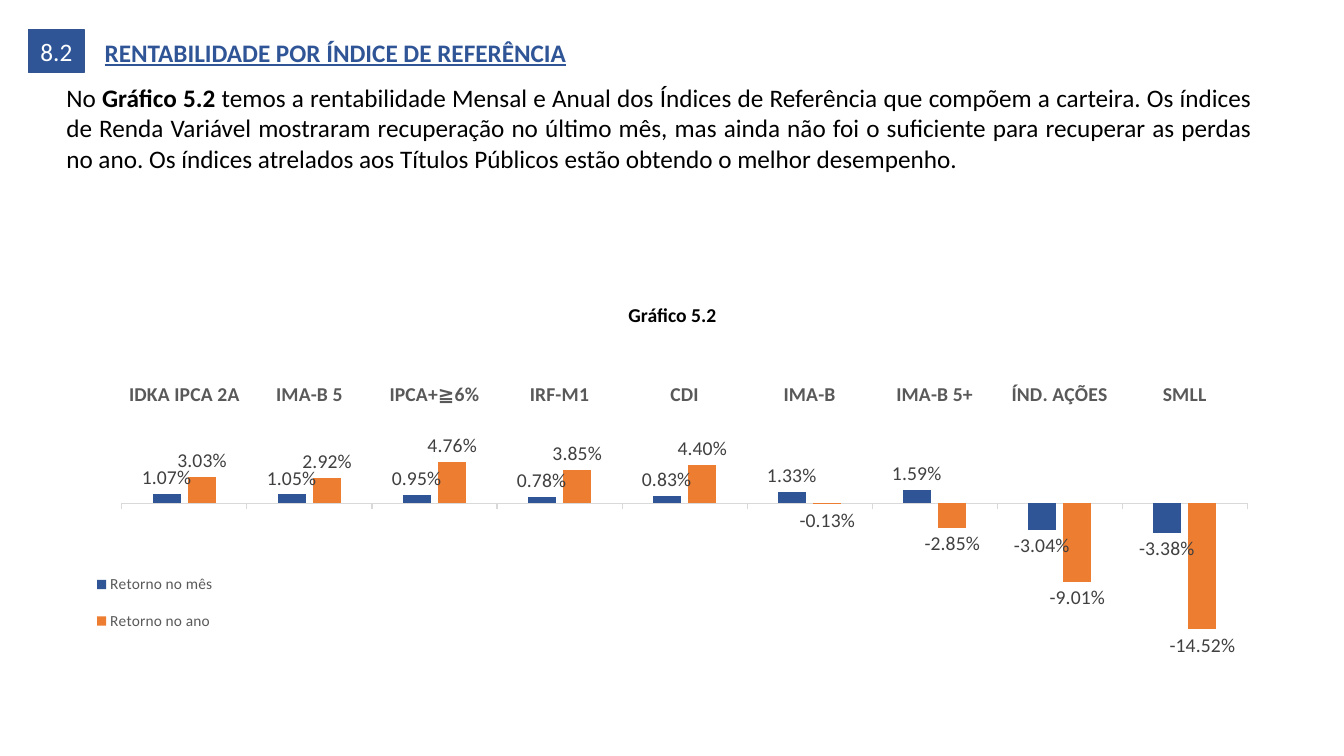
from dataclasses import dataclass

import lxml.etree
import pptx
import pptx.chart.data
import pptx.dml.color
import pptx.enum.chart
import pptx.enum.shapes
import pptx.enum.text
import pptx.oxml
import pptx.oxml.ns
import pptx.util

Pt = pptx.util.Pt
Align = pptx.enum.text.PP_ALIGN
FONT = "Calibri"
BLUE = "2F5597"
ORANGE = "ED7D31"
BLACK = "000000"
WHITE = "FFFFFF"
GREY = "595959"
PERCENT = "0.00%"


@dataclass
class Run:
    text: str
    size: float = 18
    color: str = BLACK
    bold: bool = False
    underline: bool = False


@dataclass
class TextBox:
    left: float
    top: float
    width: float
    height: float
    align: Align
    runs: list[Run]


@dataclass
class Series:
    name: str
    color: str
    values: list[float]


TEXTS = [
    TextBox(67.7, 23, 404.6, 28.8, Align.LEFT,
            [Run("RENTABILIDADE POR ÍNDICE DE REFERÊNCIA", 18, BLUE, True, True)]),
    TextBox(40.3, 55.4, 861.1, 72.7, Align.JUSTIFY, [
        Run("No "),
        Run("Gráfico 5.2 ", bold=True),
        Run("temos a rentabilidade Mensal e Anual dos Índices de Referência que "
            "compõem a carteira. Os índices de Renda Variável mostraram recuperação "
            "no último mês, mas ainda não foi o suficiente para recuperar as perdas "
            "no ano. Os índices atrelados aos Títulos Públicos estão obtendo o "
            "melhor desempenho."),
    ]),
    TextBox(405.4, 213.1, 149.8, 24.5, Align.CENTER,
            [Run("Gráfico 5.2", 14, bold=True)]),
]

INDICES = ["IDKA IPCA 2A", "IMA-B 5", "IPCA+≧6%", "IRF-M1", "CDI",
           "IMA-B", "IMA-B 5+", "ÍND. AÇÕES", "SMLL"]
RETURNS = [
    Series("Retorno no mês", BLUE,
           [0.0107, 0.0105, 0.0095, 0.0078, 0.0083, 0.0133, 0.0159, -0.0304, -0.0338]),
    Series("Retorno no ano", ORANGE,
           [0.0303, 0.0292, 0.0476, 0.0385, 0.044, -0.0013, -0.0285, -0.0901, -0.1452]),
]


def rgb(value: str) -> pptx.dml.color.RGBColor:
    return pptx.dml.color.RGBColor.from_string(value)


def set_font(font, size: float, color: str, bold: bool = False) -> None:
    font.name = FONT
    font.size = Pt(size)
    font.bold = bold
    font.color.rgb = rgb(color)


def add_runs(p, runs: list[Run], align: Align) -> None:
    p.alignment = align
    for run in runs:
        r = p.add_run()
        r.text = run.text
        set_font(r.font, run.size, run.color, run.bold)
        r.font.underline = run.underline


def add_text(s, box: TextBox) -> None:
    sp = s.shapes.add_textbox(Pt(box.left), Pt(box.top), Pt(box.width), Pt(box.height))
    tf = sp.text_frame
    tf.word_wrap = True
    add_runs(tf.paragraphs[0], box.runs, box.align)


def add_number(s) -> None:
    sp = s.shapes.add_shape(pptx.enum.shapes.MSO_SHAPE.RECTANGLE,
                            Pt(20.5), Pt(21), Pt(39.5), Pt(31))
    sp.shadow.inherit = False
    sp.fill.solid()
    sp.fill.fore_color.rgb = rgb(BLUE)
    sp.line.color.rgb = rgb("325491")
    sp.line.width = Pt(1)
    tf = sp.text_frame
    tf.word_wrap = False
    tf.vertical_anchor = pptx.enum.text.MSO_ANCHOR.MIDDLE
    add_runs(tf.paragraphs[0], [Run("8.2", 18, WHITE)], Align.CENTER)


def set_layout(parent, index: int, x: float, y: float, w: float, h: float,
               inner: bool = False) -> None:
    for old in parent.findall(pptx.oxml.ns.qn("c:layout")):
        parent.remove(old)
    layout = lxml.etree.Element(pptx.oxml.ns.qn("c:layout"))
    manual = lxml.etree.SubElement(layout, pptx.oxml.ns.qn("c:manualLayout"))
    settings = [("layoutTarget", "inner")] if inner else []
    settings += [("xMode", "edge"), ("yMode", "edge"),
                 ("x", x), ("y", y), ("w", w), ("h", h)]
    for tag, value in settings:
        lxml.etree.SubElement(manual, pptx.oxml.ns.qn(f"c:{tag}")).set("val", str(value))
    parent.insert(index, layout)


def add_returns_chart(s) -> None:
    kinds = pptx.enum.chart
    data = pptx.chart.data.CategoryChartData(number_format=PERCENT)
    data.categories = INDICES
    for item in RETURNS:
        data.add_series(item.name, item.values)
    chart = s.shapes.add_chart(kinds.XL_CHART_TYPE.COLUMN_CLUSTERED,
                               Pt(45.4), Pt(244.8), Pt(869), Pt(239.8), data).chart
    set_font(chart.font, 14, BLACK)
    chart.has_title = False

    plot = chart.plots[0]
    plot.gap_width = 219
    plot.overlap = -27
    plot.vary_by_categories = False
    for series, item in zip(plot.series, RETURNS):
        series.invert_if_negative = False
        series.format.fill.solid()
        series.format.fill.fore_color.rgb = rgb(item.color)
        labels = series.data_labels
        labels.show_value = True
        labels.position = kinds.XL_LABEL_POSITION.OUTSIDE_END
        labels.number_format = PERCENT
        labels.number_format_is_linked = False
        set_font(labels.font, 14, "404040")

    axis = chart.category_axis
    axis.tick_label_position = kinds.XL_TICK_LABEL_POSITION.HIGH
    axis.major_tick_mark = kinds.XL_TICK_MARK.OUTSIDE
    axis.has_major_gridlines = False
    axis.format.line.color.rgb = rgb("D9D9D9")
    axis.format.line.width = Pt(0.75)
    set_font(axis.tick_labels.font, 14, GREY, True)

    scale = chart.value_axis
    scale.visible = False
    scale.has_major_gridlines = False
    scale.minimum_scale = -0.2
    scale.maximum_scale = 0.1
    scale.tick_labels.number_format = PERCENT
    scale.tick_labels.number_format_is_linked = False

    chart.has_legend = True
    legend = chart.legend
    legend.position = kinds.XL_LEGEND_POSITION.LEFT
    legend.include_in_layout = False
    set_font(legend.font, 11, GREY)

    plot_area = chart.element.find(".//" + pptx.oxml.ns.qn("c:plotArea"))
    legend_xml = chart.element.find(".//" + pptx.oxml.ns.qn("c:legend"))
    set_layout(plot_area, 0, 0.048, 0.22, 0.925, 0.776, True)
    set_layout(legend_xml, 1, 0.02, 0.64, 0.11, 0.27)


def main() -> None:
    prs = pptx.Presentation()
    prs.slide_width, prs.slide_height = Pt(960), Pt(540)
    s = prs.slides.add_slide(prs.slide_layouts[6])
    add_number(s)
    for box in TEXTS:
        add_text(s, box)
    add_returns_chart(s)
    prs.save("out.pptx")


if __name__ == "__main__":
    main()
